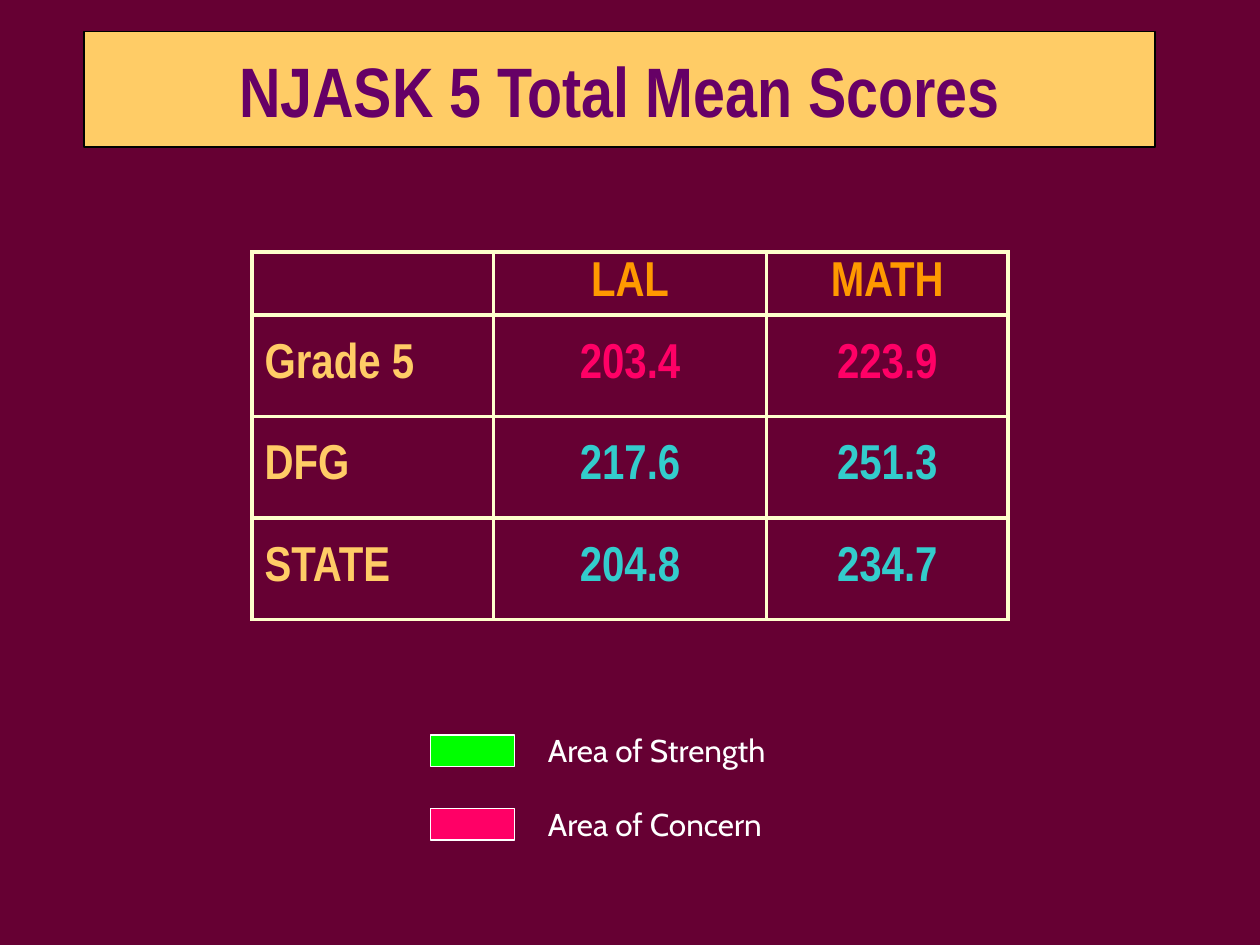
from lxml import etree
from pptx import Presentation
from pptx.dml.color import RGBColor
from pptx.enum.shapes import MSO_SHAPE
from pptx.enum.text import MSO_ANCHOR, PP_ALIGN
from pptx.oxml.ns import qn
from pptx.util import Pt

RECTANGLE = MSO_SHAPE.RECTANGLE
MIDDLE = MSO_ANCHOR.MIDDLE
LEFT, CENTER = PP_ALIGN.LEFT, PP_ALIGN.CENTER
COLORS = {
    "background": "660033",
    "banner": "FFCC66",
    "title": "660066",
    "outline": "000000",
    "border": "FFFFCC",
    "header": "FF9900",
    "label": "FFCC66",
    "score": "33CCCC",
    "strength": "00FF00",
    "concern": "FF0066",
    "white": "FFFFFF",
}
SCORES = [
    ("", "LAL", "MATH"),
    ("Grade 5", "203.4", "223.9"),
    ("DFG", "217.6", "251.3"),
    ("STATE", "204.8", "234.7"),
]
LEGEND = [("Area of Strength", "strength", 420), ("Area of Concern", "concern", 462)]


class SlideBuilder:
    """Holds the style and the current slide, and adds each kind of element."""

    heading_font = "Arial Narrow"
    body_font = "Cabin"

    def __init__(self, slide):
        self.slide = slide
        fill = slide.background.fill
        fill.solid()
        fill.fore_color.rgb = self.color("background")

    def color(self, name):
        return RGBColor.from_string(COLORS[name])

    def style(self, paragraph, font_name, size, color, bold=False, alignment=LEFT):
        paragraph.alignment = alignment
        font = paragraph.font
        font.name, font.size, font.bold = font_name, Pt(size), bold
        font.color.rgb = self.color(color)

    def box(self, left, top, width, height, fill, line, line_width):
        shape = self.slide.shapes.add_shape(
            RECTANGLE, Pt(left), Pt(top), Pt(width), Pt(height))
        shape.shadow.inherit = False
        shape.fill.solid()
        shape.fill.fore_color.rgb = self.color(fill)
        shape.line.color.rgb = self.color(line)
        shape.line.width = Pt(line_width)
        return shape

    def banner(self, text, left, top, width, height):
        frame = self.box(left, top, width, height, "banner", "outline", 0.75).text_frame
        frame.word_wrap = True
        frame.vertical_anchor = MIDDLE
        paragraph = frame.paragraphs[0]
        paragraph.text = text
        self.style(paragraph, self.heading_font, 40, "title", True, CENTER)

    def borders(self, cell, width):
        properties = cell._tc.get_or_add_tcPr()
        for side in ("a:lnL", "a:lnR", "a:lnT", "a:lnB"):
            line = etree.SubElement(properties, qn(side), w=str(Pt(width)))
            fill = etree.SubElement(line, qn("a:solidFill"))
            etree.SubElement(fill, qn("a:srgbClr"), val=COLORS["border"])

    def table(self, rows, left, top, widths, heights):
        table = self.slide.shapes.add_table(
            len(rows), len(widths), Pt(left), Pt(top),
            Pt(sum(widths)), Pt(sum(heights))).table
        table.first_row = table.horz_banding = False
        for column, width in zip(table.columns, widths):
            column.width = Pt(width)
        for row, height in zip(table.rows, heights):
            row.height = Pt(height)
        for row_index, row in enumerate(rows):
            value_color = ("header", "concern", "score", "score")[row_index]
            for column_index, text in enumerate(row):
                cell = table.cell(row_index, column_index)
                self.borders(cell, 2.25)
                cell.fill.background()
                cell.vertical_anchor = MIDDLE
                paragraph = cell.text_frame.paragraphs[0]
                paragraph.text = text
                color, alignment = (value_color, CENTER) if column_index else ("label", LEFT)
                self.style(paragraph, self.heading_font, 28, color, True, alignment)

    def text(self, lines, left, top, width, height, gap):
        shape = self.slide.shapes.add_textbox(Pt(left), Pt(top), Pt(width), Pt(height))
        frame = shape.text_frame
        frame.word_wrap = True
        for index, line in enumerate(lines):
            paragraph = frame.add_paragraph() if index else frame.paragraphs[0]
            paragraph.text = line
            paragraph.space_before = Pt(gap if index else 0)
            self.style(paragraph, self.body_font, 18, "white")


def main():
    presentation = Presentation()
    presentation.slide_width, presentation.slide_height = Pt(720), Pt(540)
    builder = SlideBuilder(presentation.slides.add_slide(presentation.slide_layouts[6]))
    builder.banner("NJASK 5 Total Mean Scores", 48, 18, 612, 66)
    builder.table(SCORES, 144, 144, (138, 156, 138), (36, 58, 58, 58))
    builder.text([label for label, _, _ in LEGEND], 306, 414, 156, 72, 21)
    for _, color, top in LEGEND:
        builder.box(246, top, 48, 18, color, "white", 1)
    presentation.save("out.pptx")


if __name__ == "__main__":
    main()
